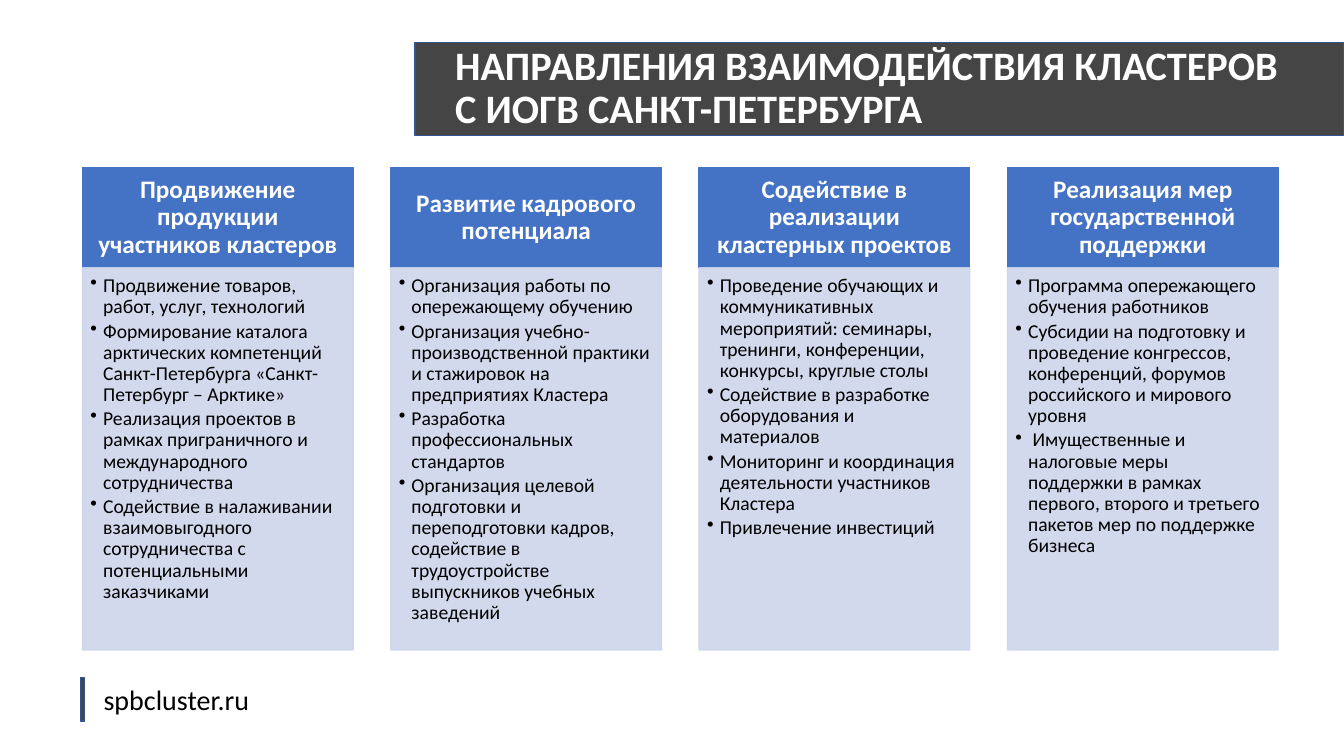
import pptx
import pptx.util
import pptx.dml.color
import pptx.enum.shapes
import pptx.enum.text
import pptx.oxml
import pptx.oxml.ns

Cm, Pt = pptx.util.Cm, pptx.util.Pt
ALIGN, ANCHOR = pptx.enum.text.PP_ALIGN, pptx.enum.text.MSO_ANCHOR
qn = pptx.oxml.ns.qn

COLORS = {
    "dark": "454545", "outline": "325491", "head": "4472C4",
    "body": "CFD5EA", "white": "FFFFFF", "black": "000000",
}
TITLE = "НАПРАВЛЕНИЯ ВЗАИМОДЕЙСТВИЯ КЛАСТЕРОВ\vС ИОГВ САНКТ-ПЕТЕРБУРГА"
SITE = "spbcluster.ru"
COLUMNS = [
    ("Продвижение продукции участников кластеров", [
        "Продвижение товаров, работ, услуг, технологий",
        "Формирование каталога арктических компетенций Санкт-Петербурга "
        "«Санкт-Петербург – Арктике»",
        "Реализация проектов в рамках приграничного и международного сотрудничества",
        "Содействие в налаживании взаимовыгодного сотрудничества "
        "с потенциальными заказчиками"]),
    ("Развитие кадрового потенциала", [
        "Организация работы по опережающему обучению",
        "Организация учебно-производственной практики и стажировок "
        "на предприятиях Кластера",
        "Разработка профессиональных стандартов",
        "Организация целевой подготовки и переподготовки кадров, содействие "
        "в трудоустройстве выпускников учебных заведений"]),
    ("Содействие в реализации кластерных проектов", [
        "Проведение обучающих и коммуникативных мероприятий: семинары, "
        "тренинги, конференции, конкурсы, круглые столы",
        "Содействие в разработке оборудования и материалов",
        "Мониторинг и координация деятельности участников Кластера",
        "Привлечение инвестиций"]),
    ("Реализация мер государственной поддержки", [
        "Программа опережающего обучения работников",
        "Субсидии на подготовку и проведение конгрессов, конференций, "
        "форумов российского и мирового уровня",
        " Имущественные и налоговые меры поддержки в рамках первого, второго "
        "и третьего пакетов мер по поддержке бизнеса"]),
]


def rgb(name):
    return pptx.dml.color.RGBColor.from_string(COLORS[name])


def add_rect(sp, box, fill, line, alpha=None):
    s = sp.add_shape(pptx.enum.shapes.MSO_SHAPE.RECTANGLE, *map(Cm, box))
    s.shadow.inherit = False
    s.fill.solid()
    s.fill.fore_color.rgb = rgb(fill)
    s.line.color.rgb = rgb(line)
    s.line.width = Pt(1)
    if alpha:
        for clr in s.element.spPr.iter(qn("a:srgbClr")):
            pptx.oxml.ns.qn("a:alpha")
            a = clr.makeelement(qn("a:alpha"), {"val": str(alpha * 1000)})
            clr.append(a)
    return s


def add_bullet(p, indent):
    pPr = p._p.get_or_add_pPr()
    pPr.set("marL", str(Cm(indent)))
    pPr.set("indent", str(-Cm(indent)))
    bu = pPr.makeelement(qn("a:buChar"), {"char": "•"})
    pPr.append(bu)


def write(s, paragraphs, size, color, bold=False, align=ALIGN.LEFT,
          anchor=ANCHOR.TOP, insets=(0.25, 0.13, 0.25, 0.13),
          spacing=None, after=0, bullet=None):
    tf = s.text_frame
    tf.word_wrap = True
    tf.vertical_anchor = anchor
    (tf.margin_left, tf.margin_top,
     tf.margin_right, tf.margin_bottom) = map(Cm, insets)
    for i, text in enumerate(paragraphs):
        p = tf.paragraphs[0] if i == 0 else tf.add_paragraph()
        p.text = text
        p.alignment = align
        p.line_spacing = spacing
        p.space_after = Pt(after)
        if bullet:
            add_bullet(p, bullet)
        for r in p.runs:
            r.font.name, r.font.size, r.font.bold = "Calibri", Pt(size), bold
            r.font.color.rgb = rgb(color)


def add_title(sp, x, y, w, h):
    add_rect(sp, (x, y, w, h), "dark", "outline")
    s = sp.add_textbox(Cm(x + 0.76), Cm(y), Cm(w - 0.76), Cm(h))
    write(s, [TITLE], 28.8, "white", bold=True, anchor=ANCHOR.MIDDLE, spacing=0.9)


def add_column(sp, x, y, w, h, head, items):
    head_h = 2.53
    s = add_rect(sp, (x, y, w, head_h), "head", "head")
    write(s, [head], 18, "white", bold=True, align=ALIGN.CENTER,
          anchor=ANCHOR.MIDDLE, insets=(0.36, 0.2, 0.36, 0.2), spacing=0.9)
    s = add_rect(sp, (x, y + head_h, w, h - head_h), "body", "body", alpha=90)
    write(s, items, 14, "black", insets=(0.2, 0.2, 0.27, 0.3),
          spacing=0.9, after=2.1, bullet=0.32)


def add_footer(sp, x, y, w, h):
    add_rect(sp, (x, y, 0.1, h), "dark", "outline")
    s = sp.add_textbox(Cm(x + 0.33), Cm(y), Cm(w), Cm(h))
    write(s, [SITE], 20, "black")


def main():
    prs = pptx.Presentation()
    prs.slide_width, prs.slide_height = Cm(33.87), Cm(19.05)
    sp = prs.slides.add_slide(prs.slide_layouts[6]).shapes

    # Title band
    add_title(sp, 10.46, 1.07, 23.4, 2.34)

    # Four equally spaced columns
    for i, (head, items) in enumerate(COLUMNS):
        add_column(sp, 2.08 + i * 7.77, 4.22, 6.82, 12.16, head, items)

    # Site address
    add_footer(sp, 2.03, 17.07, 5.44, 1.1)
    prs.save("out.pptx")


if __name__ == "__main__":
    main()
